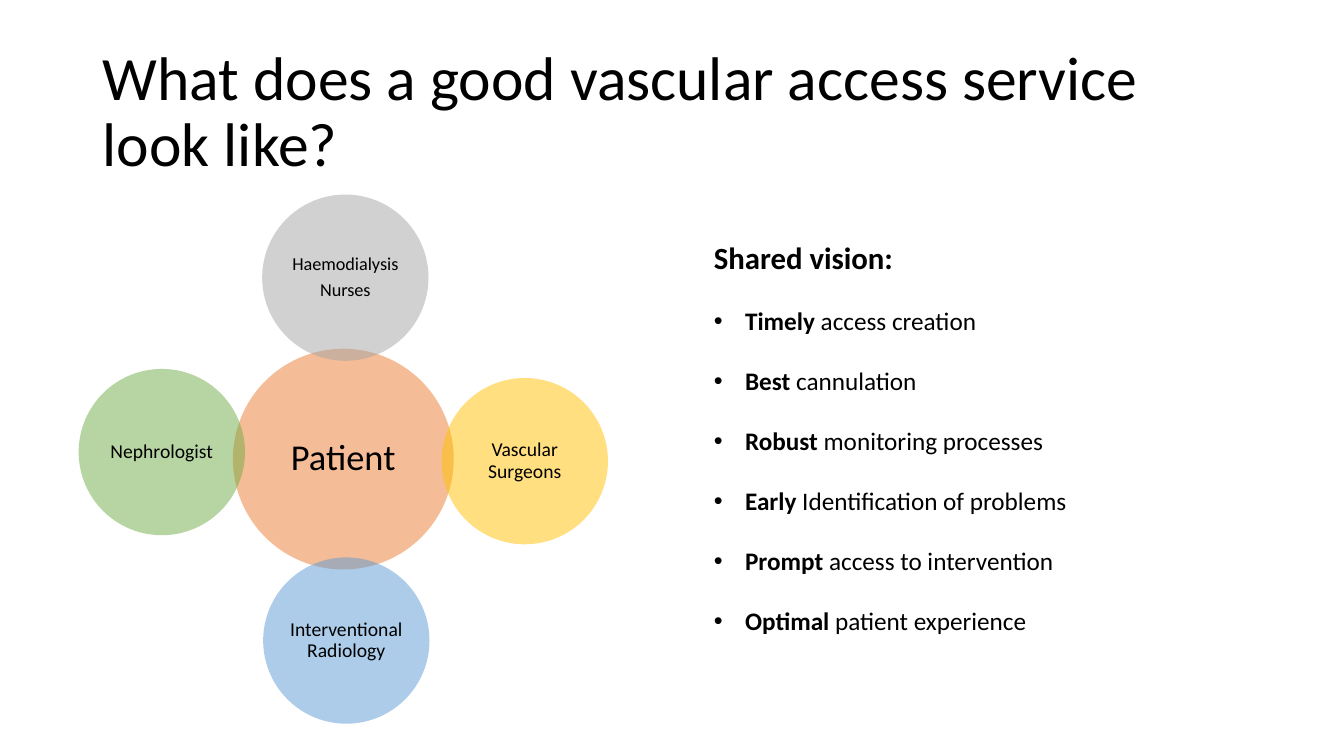
from dataclasses import dataclass

from lxml.etree import SubElement
from pptx import Presentation
from pptx.dml.color import RGBColor
from pptx.enum.shapes import MSO_SHAPE
from pptx.enum.text import MSO_ANCHOR, MSO_AUTO_SIZE, PP_ALIGN
from pptx.oxml.ns import qn
from pptx.util import Inches, Pt

FONT = "Calibri"
INK = "000000"


@dataclass
class Circle:
    """One translucent disc with its label."""

    lines: list[str]
    left: float
    top: float
    color: str
    side: float = 1.65
    size: int = 14
    inset: float = 0.02


CIRCLES = [
    Circle(["Patient"], 2.31, 3.46, "ED7D31", side=2.19, size=26, inset=0.04),
    Circle(["Haemodialysis", "Nurses"], 2.6, 1.93, "A5A5A5", size=13),
    Circle(["Vascular Surgeons"], 4.38, 3.75, "FFC000"),
    Circle(["Interventional Radiology"], 2.61, 5.53, "5B9BD5"),
    Circle(["Nephrologist"], 0.78, 3.66, "70AD47"),
]

GOALS = [
    ("Timely", " access creation"),
    ("Best", " cannulation"),
    ("Robust", " monitoring processes"),
    ("Early", " Identification of problems"),
    ("Prompt", " access to intervention"),
    ("Optimal", " patient experience"),
]


def paint(target, color: str) -> None:
    """Set a solid fill, of a shape or a font, from a hex string."""
    target.fill.solid()
    target.fill.fore_color.rgb = RGBColor.from_string(color)


def write(para, text: str, *, size: float, bold: bool = False, align=PP_ALIGN.LEFT,
          line: float = 1.0, before: float = 0, after: float = 0) -> None:
    """Add a run to a paragraph and format both."""
    para.alignment = align
    para.line_spacing = line
    para.space_before = Pt(before)
    para.space_after = Pt(after)
    run = para.add_run()
    run.text = text
    run.font.name = FONT
    run.font.size = Pt(size)
    run.font.bold = bold
    paint(run.font, INK)


def mark(para, char: str = "", indent: float = 0) -> None:
    """Give a paragraph a hanging bullet, or none."""
    props = para._p.get_or_add_pPr()
    props.set("marL", str(Inches(indent)))
    props.set("indent", str(-Inches(indent)))
    if char:
        SubElement(props, qn("a:buFont"), typeface="Arial")
        SubElement(props, qn("a:buChar"), char=char)
    else:
        SubElement(props, qn("a:buNone"))


def place(holder, left: float, top: float, width: float, height: float, anchor):
    """Move a placeholder and return its text frame."""
    holder.left, holder.top = Inches(left), Inches(top)
    holder.width, holder.height = Inches(width), Inches(height)
    frame = holder.text_frame
    frame.word_wrap = True
    frame.auto_size = MSO_AUTO_SIZE.NONE
    frame.vertical_anchor = anchor
    return frame


def draw(slide, disc: Circle) -> None:
    """Draw one half-transparent disc with centred text."""
    side = Inches(disc.side)
    shape = slide.shapes.add_shape(
        MSO_SHAPE.OVAL, Inches(disc.left), Inches(disc.top), side, side)
    shape.shadow.inherit = False
    shape.line.fill.background()
    paint(shape, disc.color)
    tint = shape._element.spPr.find(qn("a:solidFill"))[0]
    SubElement(tint, qn("a:alpha"), val="50000")
    frame = shape.text_frame
    frame.word_wrap = True
    frame.vertical_anchor = MSO_ANCHOR.MIDDLE
    frame.margin_left = frame.margin_right = Inches(disc.inset)
    frame.margin_top = frame.margin_bottom = Inches(disc.inset)
    for index, text in enumerate(disc.lines):
        para = frame.add_paragraph() if index else frame.paragraphs[0]
        write(para, text, size=disc.size, align=PP_ALIGN.CENTER,
              line=0.9, after=0.35 * disc.size)


def main() -> None:
    """Build the slide and save it."""
    deck = Presentation()
    deck.slide_width, deck.slide_height = Inches(13.33), Inches(7.5)
    slide = deck.slides.add_slide(deck.slide_layouts[1])
    title = place(slide.shapes.title, 0.92, 0.4, 11.5, 1.45, MSO_ANCHOR.MIDDLE)
    write(title.paragraphs[0], "What does a good vascular access service look like?",
          size=44, line=0.9)
    for disc in CIRCLES:
        draw(slide, disc)
    body = place(slide.placeholders[1], 6.98, 2.32, 4.31, 4.41, MSO_ANCHOR.TOP)
    head = body.paragraphs[0]
    write(head, "Shared vision:", size=22, bold=True)
    mark(head)
    for key, rest in GOALS:
        para = body.add_paragraph()
        write(para, key, size=18, bold=True, before=21.2)
        write(para, rest, size=18, before=21.2)
        mark(para, "•", 0.31)
    deck.save("out.pptx")


if __name__ == "__main__":
    main()
